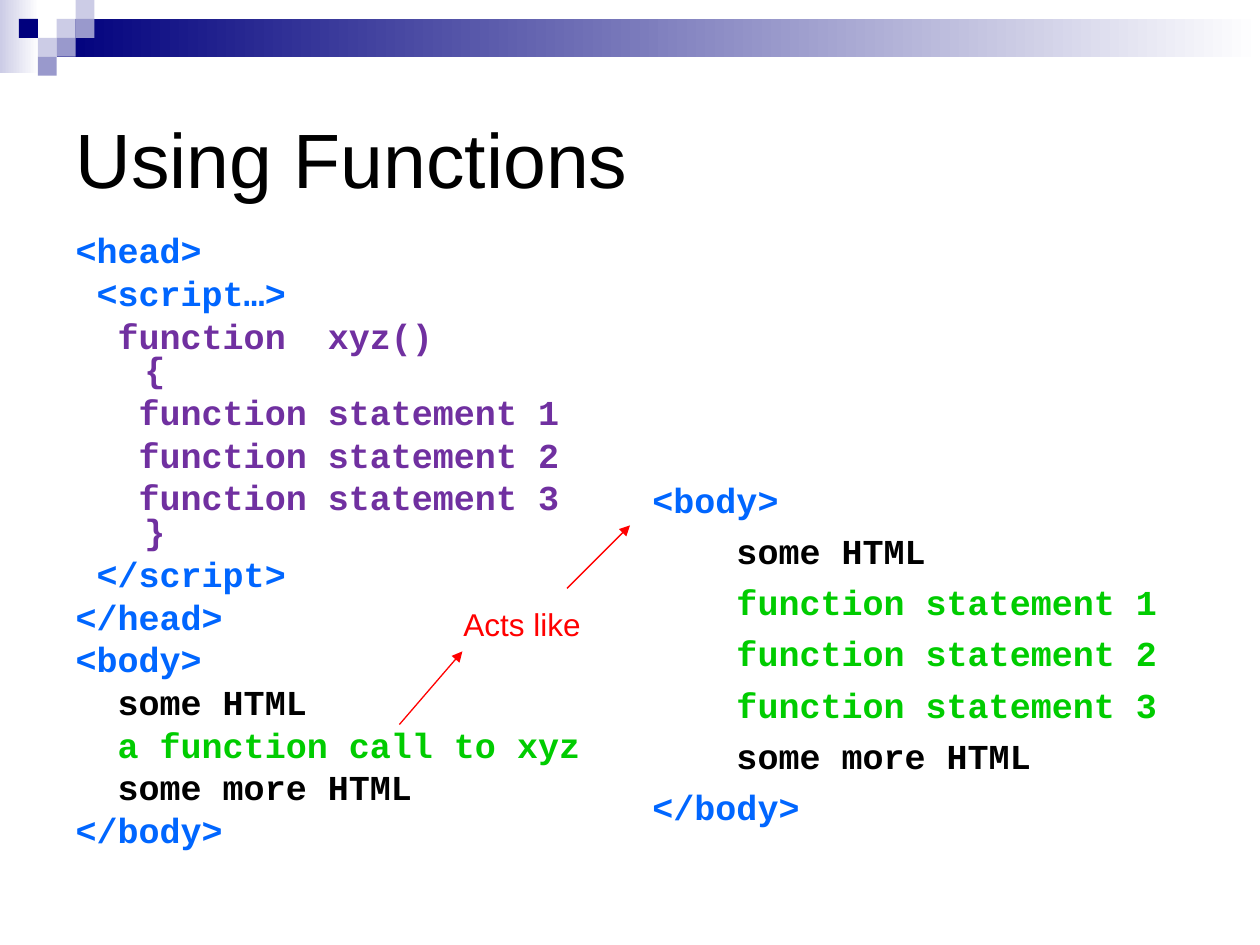
import pptx
import pptx.util
import pptx.dml.color
import pptx.enum.shapes
import pptx.enum.text
import pptx.oxml.ns
import lxml.etree

BLUE, PLUM, GREEN, BLACK, RED = "0066FF", "7030A0", "00CC00", "000000", "FF0000"
NAVY, PALE, MID, WHITE = "00007D", "CCCCE6", "9999CC", "FFFFFF"
CELL = 0.15

LEFT = [
    ("<head>", BLUE),
    (" <script…>", BLUE),
    ("  function  xyz()\v {", PLUM),
    ("   function statement 1", PLUM),
    ("   function statement 2", PLUM),
    ("   function statement 3\v }", PLUM),
    (" </script>", BLUE),
    ("</head>", BLUE),
    ("<body>", BLUE),
    ("  some HTML", BLACK),
    ("  a function call to xyz", GREEN),
    ("  some more HTML", BLACK),
    ("</body>", BLUE),
]
RIGHT = [
    ("<body>", BLUE),
    ("    some HTML", BLACK),
    *((f"    function statement {n}", GREEN) for n in (1, 2, 3)),
    ("    some more HTML", BLACK),
    ("</body>", BLUE),
]
TILES = [(3, 1, PALE), (4, 0, PALE), (4, 1, MID), (2, 2, PALE),
         (1, 1, NAVY), (3, 2, MID), (2, 3, MID)]


def tint(code):
    return pptx.dml.color.RGBColor.from_string(code)


def sub(node, tag, **attrs):
    return lxml.etree.SubElement(node, pptx.oxml.ns.qn(tag), attrs)


class Deck:
    """Hold the style and current slide, placing things in cells of the corner grid."""

    def __init__(self):
        self.file = pptx.Presentation()
        self.file.slide_width = pptx.util.Inches(10)
        self.file.slide_height = pptx.util.Inches(7.5)
        self.slide = self.file.slides.add_slide(self.file.slide_layouts[1])
        self.shapes = self.slide.shapes

    def span(self, *cells):
        return [pptx.util.Inches(round(n * CELL, 2)) for n in cells]

    def place(self, shape, *cells):
        shape.left, shape.top, shape.width, shape.height = self.span(*cells)

    def font(self, para, name, size, code, bold=False):
        para.font.name, para.font.bold = name, bold
        para.font.size = pptx.util.Pt(size)
        para.font.color.rgb = tint(code)

    def block(self, cells, code, fade=None):
        kind = pptx.enum.shapes.MSO_SHAPE.RECTANGLE
        shape = self.shapes.add_shape(kind, *self.span(*cells))
        shape.shadow.inherit = False
        shape.line.fill.background()
        if fade:
            shape.fill.gradient()
            shape.fill.gradient_angle = 0
            for stop, shade in zip(shape.fill.gradient_stops, (code, fade)):
                stop.color.rgb = tint(shade)
        else:
            shape.fill.solid()
            shape.fill.fore_color.rgb = tint(code)

    def title(self, text, cells):
        shape = self.shapes.title
        self.place(shape, *cells)
        frame = shape.text_frame
        frame.text = text
        frame.vertical_anchor = pptx.enum.text.MSO_ANCHOR.MIDDLE
        para = frame.paragraphs[0]
        para.alignment = pptx.enum.text.PP_ALIGN.LEFT
        self.font(para, "Arial", 44, BLACK)

    def code(self, shape, lines, pitch):
        frame = shape.text_frame
        frame.word_wrap = True
        frame.auto_size = pptx.enum.text.MSO_AUTO_SIZE.NONE
        for row, (text, shade) in enumerate(lines):
            para = frame.add_paragraph() if row else frame.paragraphs[0]
            para.text = text
            para.line_spacing = pitch
            para.space_before = pptx.util.Pt(5.2 if row else 0)
            props = para._p.get_or_add_pPr()
            inset = pptx.util.Inches(0.38)
            props.set("marL", str(inset))
            props.set("indent", str(-inset))
            sub(props, "a:buNone")
            self.font(para, "Courier New", 20, shade, True)

    def body(self, lines, cells):
        shape = self.slide.placeholders[1]
        self.place(shape, *cells)
        self.code(shape, lines, 0.8)

    def panel(self, lines, cells):
        self.code(self.shapes.add_textbox(*self.span(*cells)), lines, 1.0)

    def label(self, text, cells, code):
        frame = self.shapes.add_textbox(*self.span(*cells)).text_frame
        frame.word_wrap = False
        frame.text = text
        self.font(frame.paragraphs[0], "Arial", 18, code)

    def arrow(self, cells, code):
        kind = pptx.enum.shapes.MSO_CONNECTOR.STRAIGHT
        line = self.shapes.add_connector(kind, *self.span(*cells))
        line.line.color.rgb = tint(code)
        line.line.width = pptx.util.Pt(0.75)
        sub(line.line._get_or_add_ln(), "a:tailEnd", type="triangle")
        sub(line._element.spPr, "a:effectLst")


def main():
    deck = Deck()
    deck.block((0, 0, 2.07, 3.87), PALE, WHITE)
    deck.block((3, 1, 63.67, 2), NAVY, WHITE)
    for col, row, code in TILES:
        deck.block((col, row, 1, 1), code)
    deck.title("Using Functions", (3.33, 3.33, 60, 10))
    deck.body(LEFT, (3.33, 12.2, 28.87, 37.8))
    deck.panel(RIGHT, (33.87, 25, 28.87, 23.33))
    deck.label("Acts like", (23.87, 31.67, 7.53, 2.67), RED)
    deck.arrow((21.13, 38.33, 24.47, 34.47), RED)
    deck.arrow((30, 31.13, 33.33, 27.8), RED)
    deck.file.save("out.pptx")


if __name__ == "__main__":
    main()
